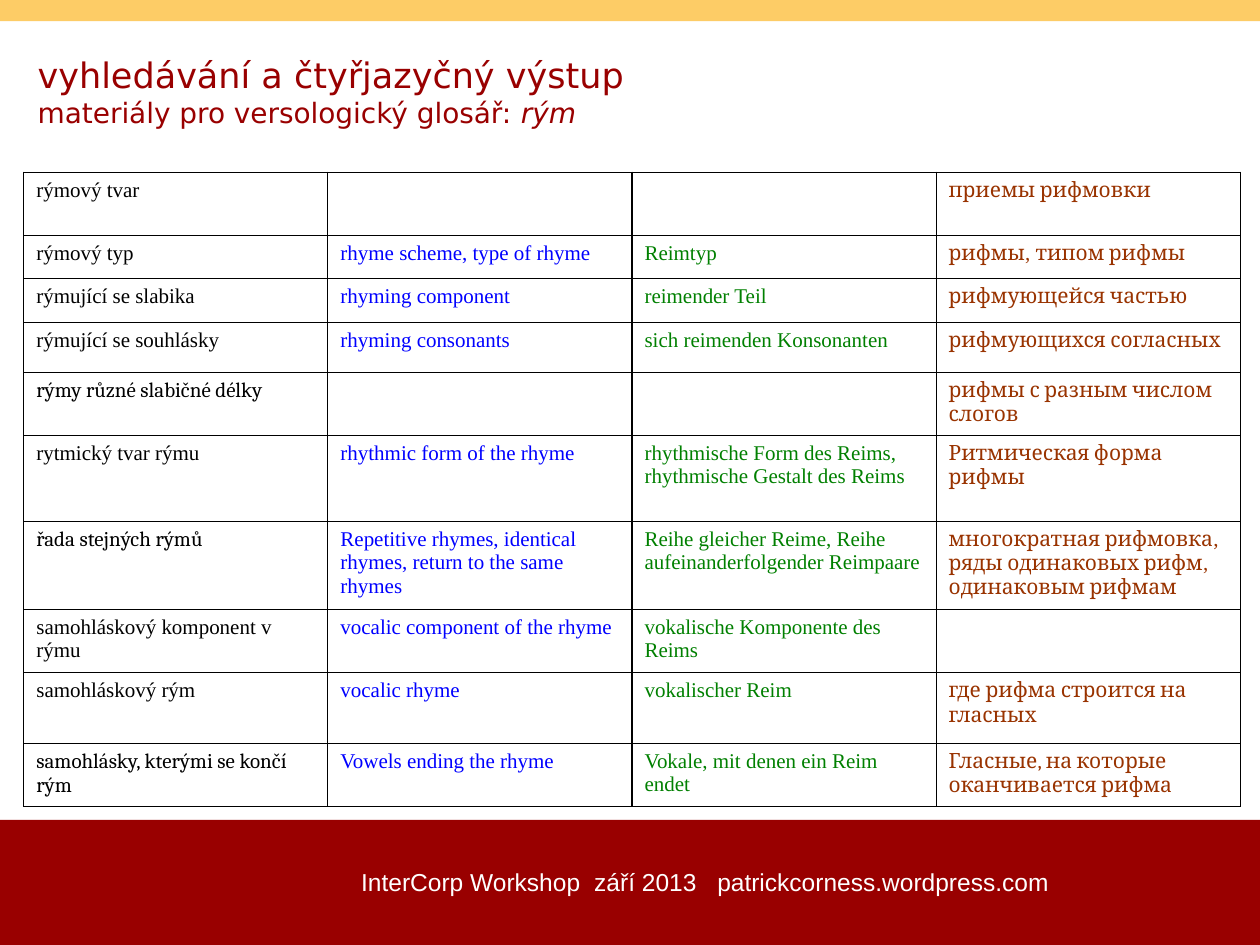
from typing import NamedTuple

import pptx
import pptx.dml.color
import pptx.enum.shapes
import pptx.enum.text
import pptx.oxml
import pptx.oxml.ns
import pptx.util
from pptx.util import Cm

TIMES, CAMBRIA, SANS = "Times New Roman", "Cambria", "DejaVu Sans"
DARK_RED, GOLD = "990000", "FDCC66"
COLUMN_COLORS = ("000000", "0000FF", "008000", "993300")
COLUMN_WIDTH = 6.13
SLIDE_WIDTH, SLIDE_HEIGHT = 25.4, 19.05


class Band(NamedTuple):
    top: float
    height: float
    color: str


class Term(NamedTuple):
    height: float
    czech: str
    english: str
    german: str
    russian: tuple[str, ...]
    czech_font: str = TIMES


BANDS = (Band(16.53, 2.52, DARK_RED), Band(0, 0.43, GOLD))

TERMS = (
    Term(1.27, "rýmový tvar", "", "", ("приемы рифмовки",)),
    Term(0.88, "rýmový typ", "rhyme scheme, type of rhyme", "Reimtyp",
         ("рифмы", "типом рифмы")),
    Term(0.88, "rýmující se slabika", "rhyming component", "reimender Teil",
         ("рифмующейся частью",)),
    Term(1.01, "rýmující se souhlásky", "rhyming consonants",
         "sich reimenden Konsonanten", ("рифмующихся согласных",)),
    Term(1.27, "rýmy různé slabičné délky", "", "",
         ("рифмы с разным числом слогов",), CAMBRIA),
    Term(1.73, "rytmický tvar rýmu", "rhythmic form of the rhyme",
         "rhythmische Form des Reims, rhythmische Gestalt des Reims",
         ("Ритмическая форма рифмы",)),
    Term(1.77, "řada stejných rýmů",
         "Repetitive rhymes, identical rhymes, return to the same rhymes",
         "Reihe gleicher Reime, Reihe aufeinanderfolgender Reimpaare",
         ("многократная рифмовка", "ряды одинаковых рифм", "одинаковым рифмам"),
         CAMBRIA),
    Term(1.27, "samohláskový komponent v rýmu", "vocalic component of the rhyme",
         "vokalische Komponente des Reims", ()),
    Term(1.42, "samohláskový rým", "vocalic rhyme", "vokalischer Reim",
         ("где рифма строится на гласных",)),
    Term(1.27, "samohlásky, kterými se končí rým", "Vowels ending the rhyme",
         "Vokale, mit denen ein Reim endet",
         ("Гласные, на которые оканчивается рифма",), CAMBRIA),
)


def rgb(color: str) -> pptx.dml.color.RGBColor:
    return pptx.dml.color.RGBColor.from_string(color)


def set_font(font, name: str, size: float, color: str) -> None:
    font.name = name
    font.size = pptx.util.Pt(size)
    font.color.rgb = rgb(color)


def add_band(s, band: Band) -> None:
    sp = s.shapes.add_shape(pptx.enum.shapes.MSO_SHAPE.RECTANGLE, 0, Cm(band.top),
                            Cm(SLIDE_WIDTH), Cm(band.height))
    sp.shadow.inherit = False
    sp.fill.solid()
    sp.fill.fore_color.rgb = rgb(band.color)
    sp.line.fill.background()


def add_text_box(s, left: float, top: float, width: float, height: float):
    tf = s.shapes.add_textbox(Cm(left), Cm(top), Cm(width), Cm(height)).text_frame
    tf.word_wrap = True
    return tf


def add_title(s) -> None:
    tf = add_text_box(s, 0.51, 0.94, 24.5, 1.8)
    tf.vertical_anchor = pptx.enum.text.MSO_ANCHOR.MIDDLE
    p = tf.paragraphs[0]
    set_font(p.font, SANS, 16, DARK_RED)
    r = p.add_run()
    r.text = "vyhledávání a čtyřjazyčný výstup"
    r.font.size = pptx.util.Pt(20)
    p.add_line_break()
    p.add_run().text = "materiály pro versologický glosář: "
    r = p.add_run()
    r.text = "rým"
    r.font.italic = True


def add_footer(s) -> None:
    tf = add_text_box(s, 6.53, 17.35, 15.39, 1.45)
    tf.margin_left = Cm(0.75)
    p = tf.paragraphs[0]
    p.text = "InterCorp Workshop\tzáří 2013\tpatrickcorness.wordpress.com"
    stops = "".join(f'<a:tab pos="{Cm(pos)}" algn="l"/>' for pos in (4.7, 7.18))
    p._p.get_or_add_pPr().append(pptx.oxml.parse_xml(
        f'<a:tabLst {pptx.oxml.ns.nsdecls("a")}>{stops}</a:tabLst>'))
    set_font(p.font, "Arial", 14, "FFFFFF")


def add_borders(cell) -> None:
    for side in ("lnL", "lnR", "lnT", "lnB"):
        cell._tc.get_or_add_tcPr().append(pptx.oxml.parse_xml(
            f'<a:{side} {pptx.oxml.ns.nsdecls("a")} w="{pptx.util.Pt(0.75)}">'
            f'<a:solidFill><a:srgbClr val="000000"/></a:solidFill></a:{side}>'))


def fill_cell(cell, phrases: tuple[str, ...], font: str, color: str) -> None:
    """Write the phrases, parted by commas set in Times."""
    add_borders(cell)
    cell.fill.background()
    p = cell.text_frame.paragraphs[0]
    set_font(p.font, font, 12, color)
    for i, phrase in enumerate(phrases):
        if i:
            r = p.add_run()
            r.text = ", "
            r.font.name = TIMES
        p.add_run().text = phrase


def add_glossary(s) -> None:
    height = sum(term.height for term in TERMS)
    table = s.shapes.add_table(len(TERMS), len(COLUMN_COLORS), Cm(0.48), Cm(3.47),
                               Cm(COLUMN_WIDTH * len(COLUMN_COLORS)), Cm(height)).table
    table.first_row = table.horz_banding = False
    for column in table.columns:
        column.width = Cm(COLUMN_WIDTH)
    for row, term in zip(table.rows, TERMS):
        row.height = Cm(term.height)
        texts = ((term.czech,), (term.english,), (term.german,), term.russian)
        fonts = (term.czech_font, TIMES, TIMES, CAMBRIA)
        for cell, phrases, font, color in zip(row.cells, texts, fonts, COLUMN_COLORS):
            fill_cell(cell, tuple(filter(None, phrases)), font, color)


def main() -> None:
    prs = pptx.Presentation()
    prs.slide_width, prs.slide_height = Cm(SLIDE_WIDTH), Cm(SLIDE_HEIGHT)
    s = prs.slides.add_slide(prs.slide_layouts[6])
    for band in BANDS:
        add_band(s, band)
    add_footer(s)
    add_title(s)
    add_glossary(s)
    prs.save("out.pptx")


if __name__ == "__main__":
    main()
